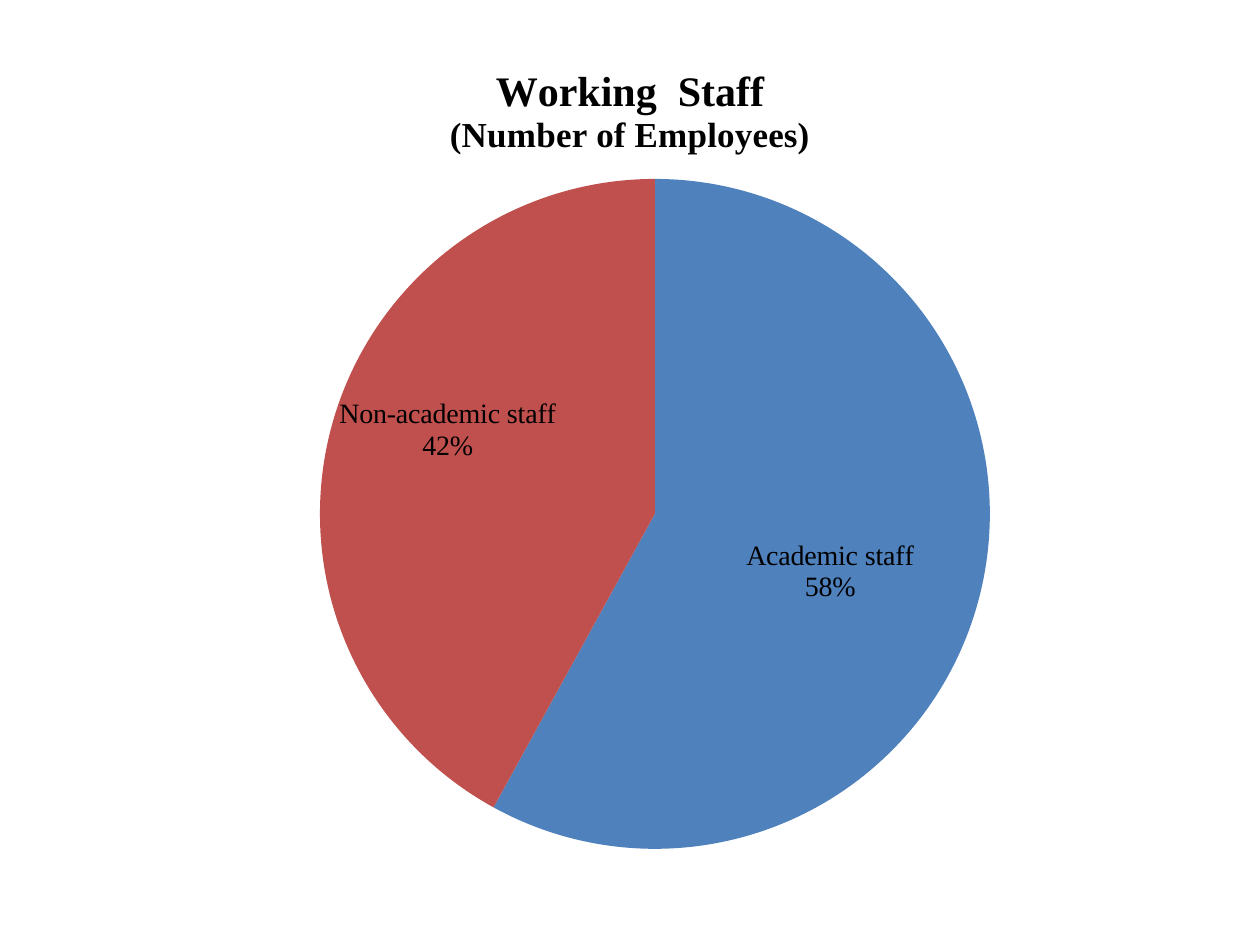
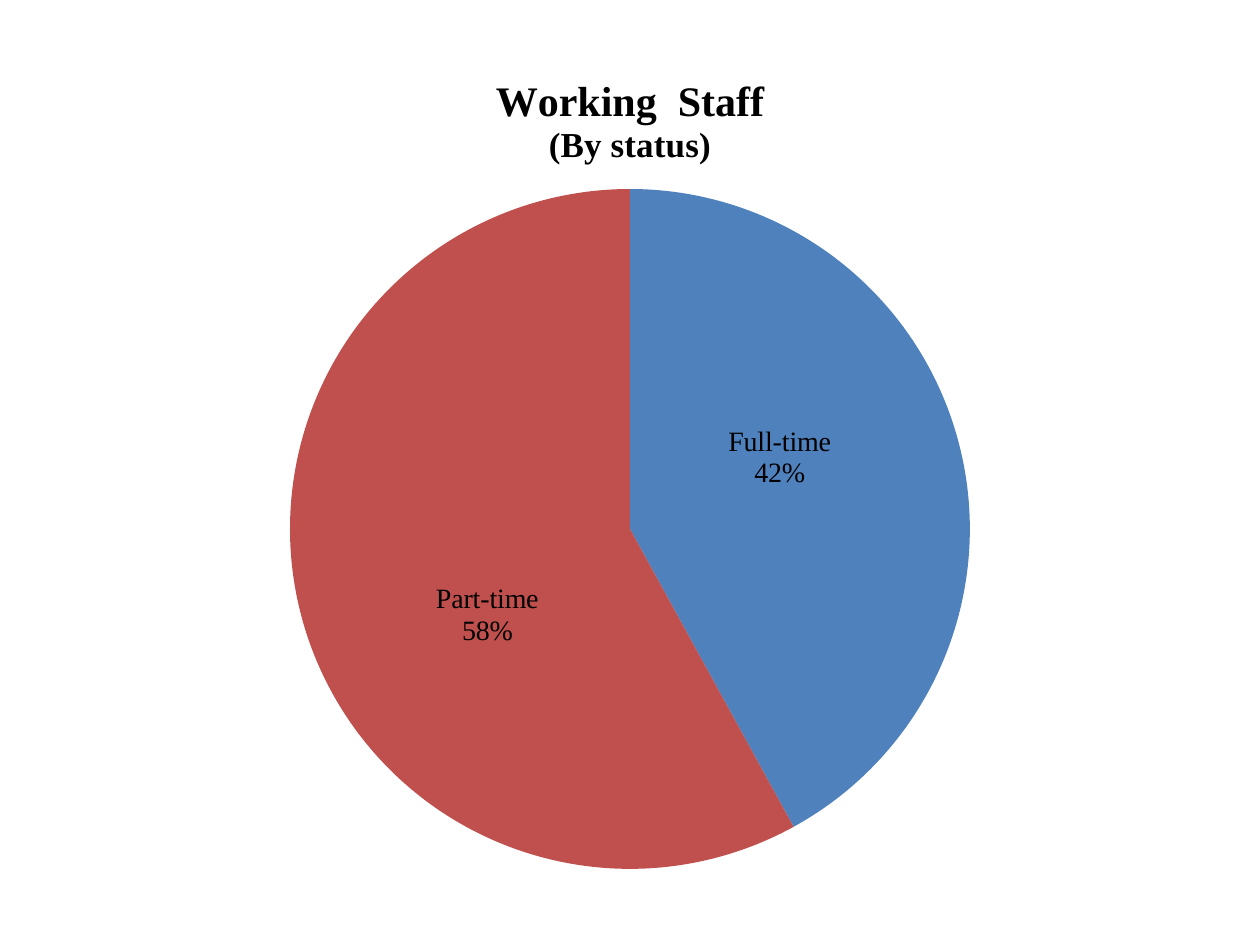
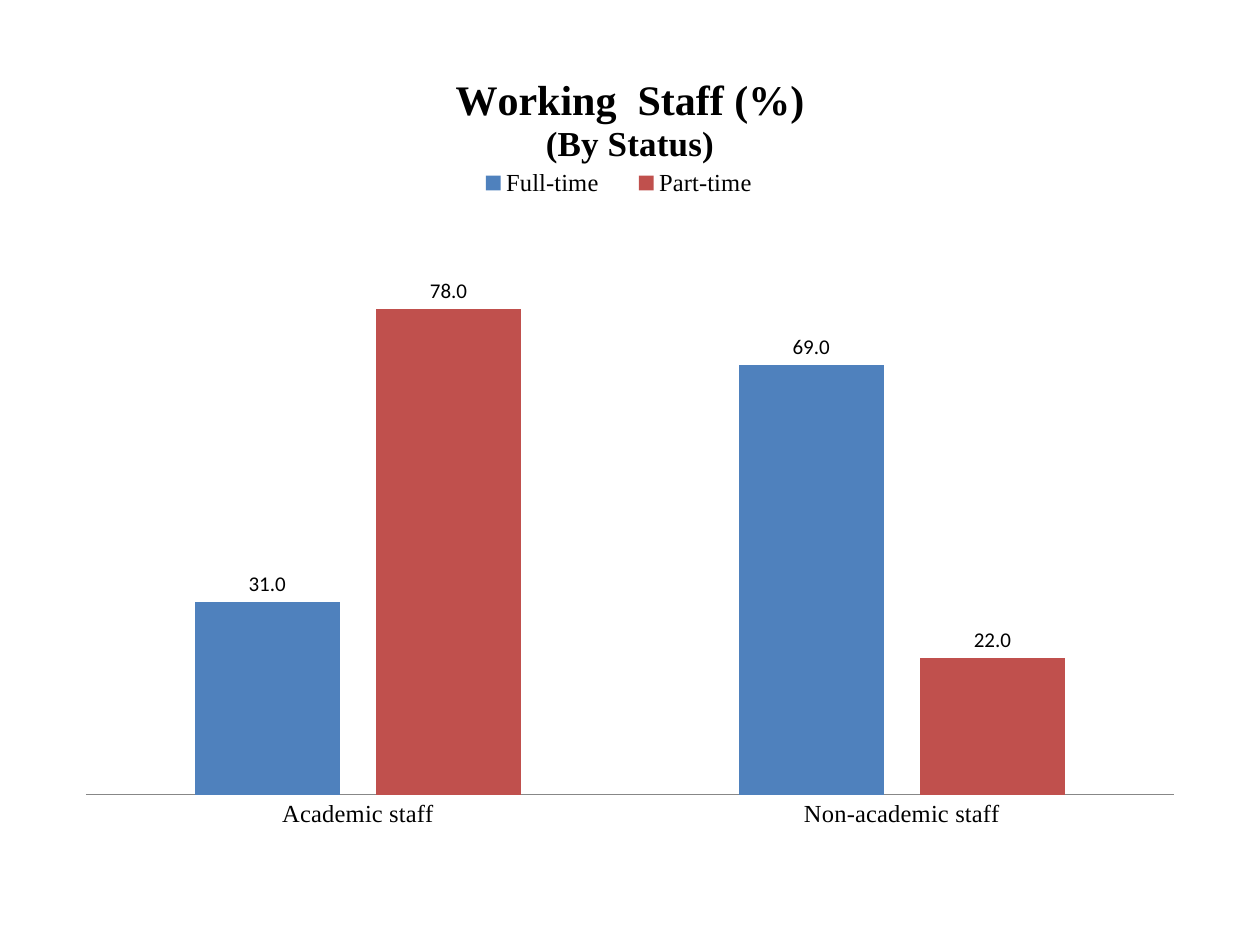
from lxml import etree
from pptx import Presentation
from pptx import util as u
from pptx.chart.data import CategoryChartData
from pptx.dml.color import RGBColor
from pptx.enum import chart as c
from pptx.oxml import ns

# Shared style
PX = 914400 // 126
COLORS = {"first": "4F81BD", "second": "C0504D", "text": "000000", "axis": "878787"}
SERIES_COLORS = [COLORS["first"], COLORS["second"]]
SERIF, SANS = "Times New Roman", "Calibri"

# Content: frames, plot areas and the legend are left, top, width, height in px;
# label shifts are px away from the middle of the slice
PIES = [
    {
        "title": ["Working  Staff", "(Number of Employees)"],
        "frame": (63, 39, 1134, 826),
        "plot": (320, 179, 670, 670),
        "values": {"Academic staff": 58, "Non-academic staff": 42},
        "shifts": [(13, 16), (-45, -42)],
    },
    {
        "title": ["Working  Staff", "(By status)"],
        "frame": (63, 49, 1134, 836),
        "plot": (290, 189, 680, 680),
        "values": {"Full-time": 42, "Part-time": 58},
        "shifts": [(-15, -29), (22, 44)],
    },
]
COLUMNS = {
    "title": ["Working  Staff (%)", "(By Status)"],
    "frame": (63, 49, 1134, 795),
    "plot": (86, 234, 1088, 561),
    "legend": (454, 165, 330, 36),
    "categories": ["Academic staff", "Non-academic staff"],
    "series": {"Full-time": [31, 69], "Part-time": [78, 22]},
}


def style_font(font, size, name=SERIF, bold=False):
    font.size, font.name, font.bold = u.Pt(size), name, bold
    font.color.rgb = RGBColor.from_string(COLORS["text"])


def paint(part, color):
    part.format.fill.solid()
    part.format.fill.fore_color.rgb = RGBColor.from_string(color)


def add_child(parent, tag, **attributes):
    return etree.SubElement(parent, ns.qn(tag), attributes)


def set_layout(element, index, **settings):
    """Give a chart part a manual layout, as its child number index."""
    for old_layout in element.findall(ns.qn("c:layout")):
        element.remove(old_layout)
    layout = etree.Element(ns.qn("c:layout"))
    manual = add_child(layout, "c:manualLayout")
    for tag, value in settings.items():
        text = value if isinstance(value, str) else f"{value:.4f}"
        add_child(manual, f"c:{tag}", val=text)
    element.insert(index, layout)


def edge_settings(box, frame):
    """Return a px box as fractions of the chart frame."""
    return {"xMode": "edge", "yMode": "edge",
            "x": (box[0] - frame[0]) / frame[2], "y": (box[1] - frame[1]) / frame[3],
            "w": box[2] / frame[2], "h": box[3] / frame[3]}


def add_chart(presentation, content, kind, data):
    """Add a slide with one titled chart and a fixed plot area."""
    slide = presentation.slides.add_slide(presentation.slide_layouts[6])
    frame = content["frame"]
    chart = slide.shapes.add_chart(kind, *(n * PX for n in frame), data).chart
    style_font(chart.font, 10, SANS)

    # Title: the second line is smaller
    title = chart.chart_title
    title.include_in_layout = False
    title.text_frame.text = "\n".join(content["title"])
    for paragraph, size in zip(title.text_frame.paragraphs, (24, 20)):
        style_font(paragraph.runs[0].font, size, bold=True)

    set_layout(chart._chartSpace.chart.plotArea, 0, layoutTarget="inner",
               **edge_settings(content["plot"], frame))
    return chart


def add_pie_slide(presentation, content):
    data = CategoryChartData()
    data.categories = list(content["values"])
    data.add_series("Series 1", list(content["values"].values()))
    chart = add_chart(presentation, content, c.XL_CHART_TYPE.PIE, data)
    chart.has_legend = False
    plot = chart.plots[0]
    plot.vary_by_categories = True

    # Slices and their labels
    for index, color in enumerate(SERIES_COLORS):
        point = plot.series[0].points[index]
        paint(point, color)
        style_font(point.data_label.font, 16)
        point.data_label.position = c.XL_LABEL_POSITION.CENTER

    # Each label shows category and percentage, shifted inside its slice
    label_elements = plot.series[0]._element.findall(".//" + ns.qn("c:dLbl"))
    for element, (dx, dy) in zip(label_elements, content["shifts"]):
        for tag, shown in (("showVal", "0"), ("showCatName", "1"), ("showPercent", "1")):
            element.find(ns.qn(f"c:{tag}")).set("val", shown)
        add_child(element, "c:separator").text = "\n"
        set_layout(element, 1, x=dx / content["frame"][2], y=dy / content["frame"][3])


def add_column_slide(presentation, content):
    data = CategoryChartData(number_format="#,##0.0")
    data.categories = content["categories"]
    for name, values in content["series"].items():
        data.add_series(name, values)
    chart = add_chart(presentation, content, c.XL_CHART_TYPE.COLUMN_CLUSTERED, data)

    # Columns
    plot = chart.plots[0]
    plot.vary_by_categories = False
    plot.gap_width, plot.overlap = 150, -25
    for series, color in zip(plot.series, SERIES_COLORS):
        paint(series, color)
        labels = series.data_labels
        labels.show_value = True
        labels.number_format, labels.number_format_is_linked = "#,##0.0", False
        labels.position = c.XL_LABEL_POSITION.OUTSIDE_END
        style_font(labels.font, 12, SANS)

    # Axes
    axis = chart.category_axis
    axis.major_tick_mark = c.XL_TICK_MARK.NONE
    axis.format.line.color.rgb = RGBColor.from_string(COLORS["axis"])
    axis.format.line.width = u.Pt(0.5)
    style_font(axis.tick_labels.font, 14)
    scale = chart.value_axis
    scale.minimum_scale, scale.maximum_scale = 0, 90
    scale.has_major_gridlines = False
    scale.visible = False

    # Legend
    chart.has_legend = True
    legend = chart.legend
    legend.position = c.XL_LEGEND_POSITION.TOP
    legend.include_in_layout = False
    style_font(legend.font, 14)
    set_layout(legend._element, 1, **edge_settings(content["legend"], content["frame"]))


def main():
    presentation = Presentation()
    presentation.slide_width, presentation.slide_height = u.Inches(10), u.Inches(7.5)
    for content in PIES:
        add_pie_slide(presentation, content)
    add_column_slide(presentation, COLUMNS)
    presentation.save("out.pptx")


if __name__ == "__main__":
    main()
